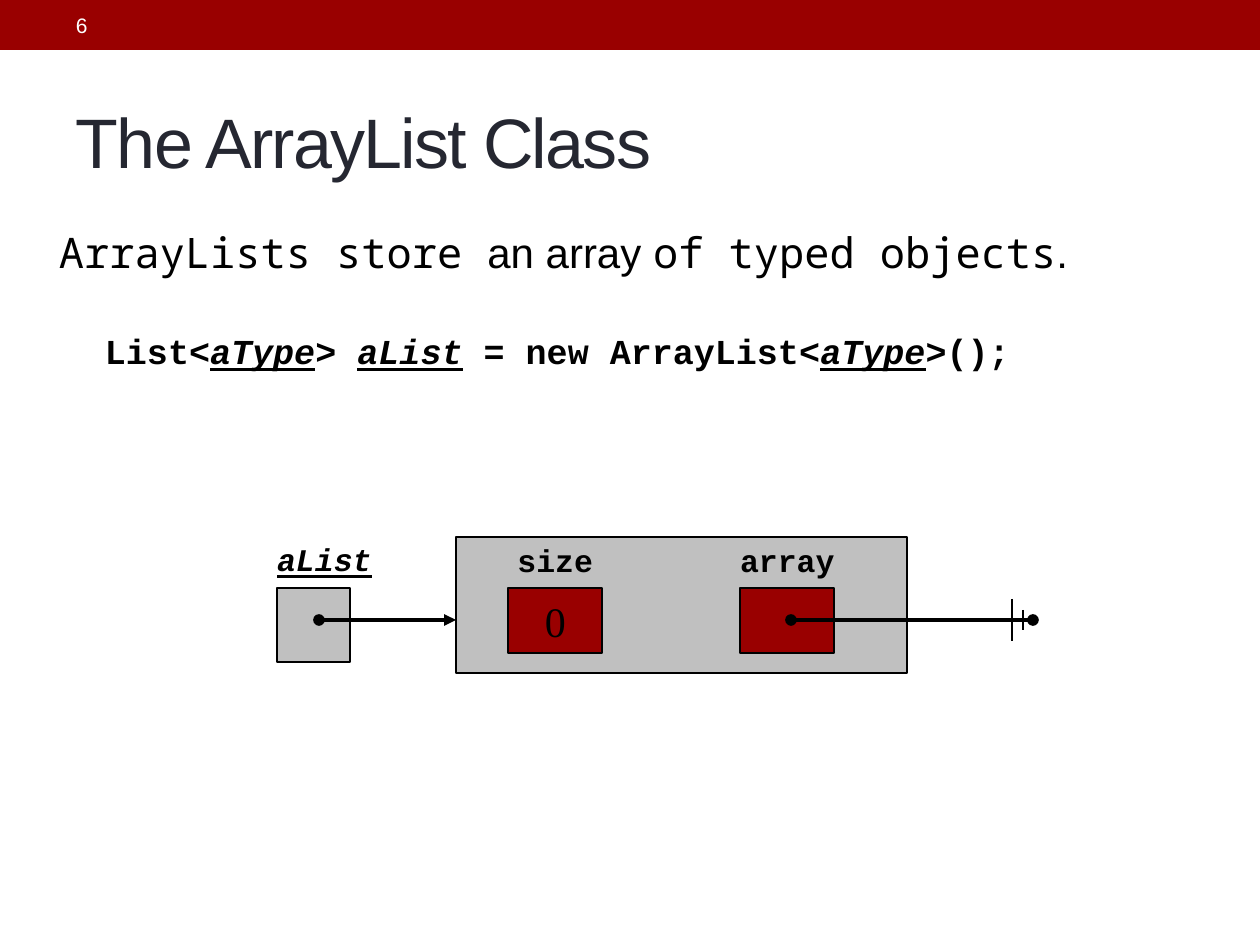
from lxml import etree
from pptx import Presentation
from pptx.dml.color import RGBColor
from pptx.enum.shapes import MSO_CONNECTOR, MSO_SHAPE
from pptx.enum.text import MSO_ANCHOR, PP_ALIGN
from pptx.oxml.ns import qn
from pptx.util import Emu, Pt

LEFT, CENTER = PP_ALIGN.LEFT, PP_ALIGN.CENTER
TOP, MIDDLE = MSO_ANCHOR.TOP, MSO_ANCHOR.MIDDLE
RECT, STRAIGHT = MSO_SHAPE.RECTANGLE, MSO_CONNECTOR.STRAIGHT

EMU_PER_PX = 914400 / 126
RED, GREY, BLACK, WHITE, INK = "990000", "C0C0C0", "000000", "FFFFFF", "252731"
SANS, MONO, CODE, SERIF = "Arial", "Noto Sans Mono", "Courier New", "Times New Roman"

# Content: each run is (text, format)
VARIABLE = {"italic": True, "underline": True}
INTRO = [("ArrayLists store ", {"font": MONO}), ("an array ", {}),
         ("of typed objects", {"font": MONO}), (".", {})]
DECLARATION = [("List<", {}), ("aType", VARIABLE), ("> ", {}), ("aList", VARIABLE),
               (" = new ArrayList<", {}), ("aType", VARIABLE), (">();", {})]

# Diagram: left, top, width, height
VARIABLE_BOX = (277, 588, 73, 74)
OBJECT_BOX = (456, 537, 451, 136)
FIELDS = [("size", 508, "0"), ("array", 740, "")]
FIELD_TOP, FIELD_W, FIELD_H = 588, 94, 65
LABEL_W, LABEL_H = 140, 54
ARROW_Y = 620
ARROWS = [(319, 456, "triangle"), (791, 1033, "oval")]
GROUND_BARS = [(1012, 21), (1023, 10)]  # x, half height


def px(n):
    return Emu(round(n * EMU_PER_PX))


def rgb(color):
    return RGBColor.from_string(color)


def write(s, runs, size, font=SANS, color=BLACK, bold=False, align=LEFT,
          anchor=TOP, inset=(13, 6), spacing=0):
    tf = s.text_frame
    tf.word_wrap = True
    tf.vertical_anchor = anchor
    tf.margin_left, tf.margin_top = px(inset[0]), px(inset[1])
    p = tf.paragraphs[0]
    p.alignment = align
    for text, fmt in [(runs, {})] if isinstance(runs, str) else runs:
        r = p.add_run()
        r.text = text
        r.font.name = fmt.get("font", font)
        r.font.size = Pt(size)
        r.font.bold = bold
        r.font.italic = fmt.get("italic", False)
        r.font.underline = fmt.get("underline", False)
        r.font.color.rgb = rgb(color)
        if spacing:
            r.font._element.set("spc", str(spacing))


def add_text(box, runs, size, **fmt):
    write(slide.shapes.add_textbox(*map(px, box)), runs, size, **fmt)


def add_rect(box, fill, outlined=True):
    s = slide.shapes.add_shape(RECT, *map(px, box))
    s.shadow.inherit = False
    s.fill.solid()
    s.fill.fore_color.rgb = rgb(fill)
    if outlined:
        s.line.color.rgb = rgb(BLACK)
        s.line.width = Pt(0.75)
    else:
        s.line.fill.background()
    return s


def add_line(x1, y1, x2, y2, width, head=None, tail=None):
    c = slide.shapes.add_connector(STRAIGHT, px(x1), px(y1), px(x2), px(y2))
    c.line.color.rgb = rgb(BLACK)
    c.line.width = Pt(width)
    ln = c.line._get_or_add_ln()
    for tag, kind in (("a:headEnd", head), ("a:tailEnd", tail)):
        if kind:
            etree.SubElement(ln, qn(tag), type=kind)
    etree.SubElement(c._element.spPr, qn("a:effectLst"))


prs = Presentation()
prs.slide_width, prs.slide_height = px(1260), px(945)
slide = prs.slides.add_slide(prs.slide_layouts[5])

# Header bar and slide number
add_rect((0, 0, 1260, 50), RED, outlined=False)
add_text((63, 3, 399, 45), "6", 12, color=WHITE, anchor=MIDDLE)

# Title
title = slide.shapes.title
title.left, title.top, title.width, title.height = map(px, (63, 73, 1134, 136))
write(title, "The ArrayList Class", 40, color=INK, anchor=MIDDLE, spacing=-100)

# Body text and declaration
add_text((21, 220, 1207, 651), INTRO, 24, inset=(38, 6))
add_text((92, 315, 1147, 168), DECLARATION, 20, font=CODE, bold=True, inset=(13, 14))

# Variable that refers to the list
add_text((214, 528, 220, 50), [("aList", VARIABLE)], 18, font=CODE, bold=True,
         align=CENTER, inset=(13, 12))
add_rect(VARIABLE_BOX, GREY)

# List object with its fields
add_rect(OBJECT_BOX, GREY)
for name, left, value in FIELDS:
    label_left = left + (FIELD_W - LABEL_W) // 2
    add_text((label_left, 525, LABEL_W, LABEL_H), name, 18, font=CODE, bold=True,
             align=CENTER, inset=(13, 16))
    cell = add_rect((left, FIELD_TOP, FIELD_W, FIELD_H), RED)
    if value:
        write(cell, value, 24, font=SERIF, align=CENTER, anchor=MIDDLE)

# References, the last one ending in a null symbol
for x1, x2, tail in ARROWS:
    add_line(x1, ARROW_Y, x2, ARROW_Y, 2.25, head="oval", tail=tail)
for x, half in GROUND_BARS:
    add_line(x, ARROW_Y - half, x, ARROW_Y + half, 0.75)

prs.save("out.pptx")
